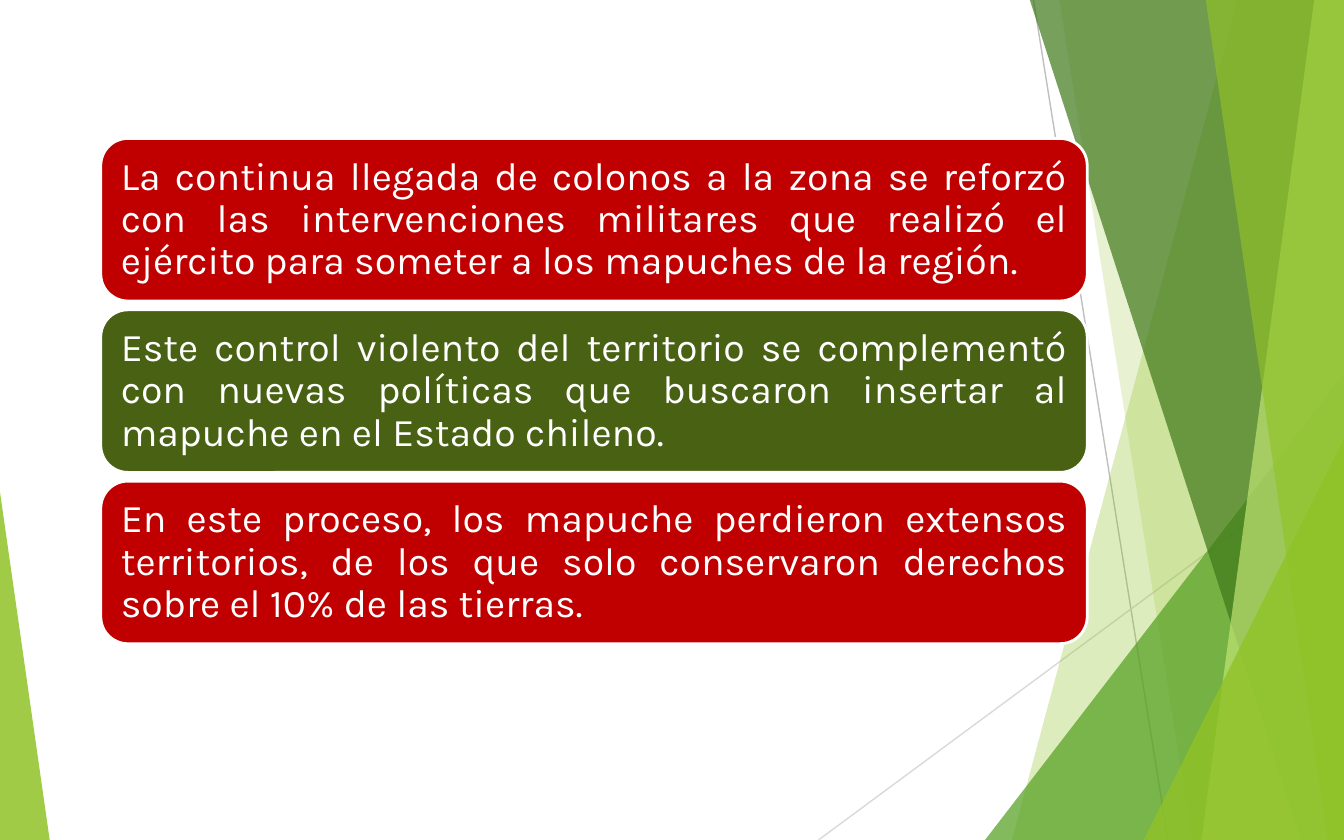
from pptx import Presentation
from pptx.dml.color import RGBColor
from pptx.enum.shapes import MSO_CONNECTOR, MSO_SHAPE
from pptx.enum.text import MSO_ANCHOR, PP_ALIGN
from pptx.oxml.ns import qn
from pptx.util import Inches, Pt
from lxml import etree

STRAIGHT = MSO_CONNECTOR.STRAIGHT
TRIANGLE = MSO_SHAPE.ISOSCELES_TRIANGLE
ROUNDED = MSO_SHAPE.ROUNDED_RECTANGLE
MIDDLE = MSO_ANCHOR.MIDDLE
JUSTIFY = PP_ALIGN.JUSTIFY

WHITE = RGBColor(0xFF, 0xFF, 0xFF)
GRAY = RGBColor(0xBF, 0xBF, 0xBF)
LIGHT_GRAY = RGBColor(0xD9, 0xD9, 0xD9)
LIME = RGBColor(0x90, 0xC2, 0x26)
PALE_LIME = RGBColor(0xC0, 0xE4, 0x74)
GREEN = RGBColor(0x54, 0xA0, 0x21)
DARK_GREEN = RGBColor(0x3F, 0x78, 0x19)
OLIVE = RGBColor(0x48, 0x61, 0x13)
RED = RGBColor(0xC0, 0x00, 0x00)

W, H = 10, 6.25

prs = Presentation()
prs.slide_width, prs.slide_height = Inches(W), Inches(H)
slide = prs.slides.add_slide(prs.slide_layouts[6])
shapes = slide.shapes


def paint(s, color, opacity):
    """Fill a shape with a translucent color, without outline or shadow."""
    s.shadow.inherit = False
    s.fill.solid()
    s.fill.fore_color.rgb = color
    clr = s.element.spPr.find(".//" + qn("a:srgbClr"))
    etree.SubElement(clr, qn("a:alpha"), val=str(opacity * 1000))
    s.line.fill.background()


def add_triangle(left, top, width, apex, color, opacity):
    """Right triangle standing on the bottom edge of the slide."""
    s = shapes.add_shape(TRIANGLE, Inches(left), Inches(top),
                         Inches(width), Inches(H - top))
    s.adjustments[0] = apex
    paint(s, color, opacity)


# Thin lines behind the bands
for x1, y1, x2, y2, color in [(7.69, 0, 8.69, H, GRAY),
                              (W, 3.36, 6.09, H, LIGHT_GRAY)]:
    c = shapes.add_connector(STRAIGHT, Inches(x1), Inches(y1), Inches(x2), Inches(y2))
    c.line.color.rgb = color
    c.line.width = Pt(0.75)
    etree.SubElement(c.element.spPr, qn("a:effectLst"))

# Right side, back to front: bands (top x, bottom x) and triangles (left, top)
facets = [
    ("band", 9.21, 7.53, LIME, 30),
    ("band", 7.88, 8.87, LIME, 20),
    ("triangle", 7.33, 2.78, GREEN, 72),
    ("band", 7.66, 9.68, DARK_GREEN, 70),
    ("band", 9.78, 8.94, PALE_LIME, 70),
    ("band", 8.97, 9.88, LIME, 65),
    ("triangle", 8.51, 3.27, LIME, 80),
]
for kind, a, b, color, opacity in facets:
    if kind == "triangle":
        add_triangle(a, b, W - a, 1, color, opacity)
    else:
        fb = shapes.build_freeform(Inches(a), Inches(-0.01))
        fb.add_line_segments([(Inches(W), Inches(-0.01)), (Inches(W), Inches(H)),
                              (Inches(b), Inches(H))], close=True)
        paint(fb.convert_to_shape(), color, opacity)

# Left corner
add_triangle(0, 3.66, 0.37, 0, LIME, 85)

# Stacked text boxes
boxes = [
    ("La continua llegada de colonos a la zona se reforzó con las intervenciones "
     "militares que realizó el ejército para someter a los mapuches de la región.", RED),
    ("Este control violento del territorio se complementó con nuevas políticas "
     "que buscaron insertar al mapuche en el Estado chileno.", OLIVE),
    ("En este proceso, los mapuche perdieron extensos territorios, de los que "
     "solo conservaron derechos sobre el 10% de las tierras.", RED),
]
frame = {"word_wrap": True, "vertical_anchor": MIDDLE,
         "margin_left": Inches(0.09), "margin_right": Inches(0.09),
         "margin_top": Inches(0.09), "margin_bottom": Inches(0.09)}
for i, (text, color) in enumerate(boxes):
    s = shapes.add_shape(ROUNDED, Inches(0.75), Inches(1.03 + i * 1.275),
                         Inches(7.34), Inches(1.21))
    s.shadow.inherit = False
    s.fill.solid()
    s.fill.fore_color.rgb = color
    s.line.color.rgb = WHITE
    s.line.width = Pt(1.5)
    tf = s.text_frame
    for name, value in frame.items():
        setattr(tf, name, value)
    p = tf.paragraphs[0]
    p.alignment = JUSTIFY
    p.line_spacing = 0.9
    r = p.add_run()
    r.text = text
    r.font.name = "Karla"
    r.font.size = Pt(21)
    r.font.color.rgb = WHITE

prs.save("out.pptx")
